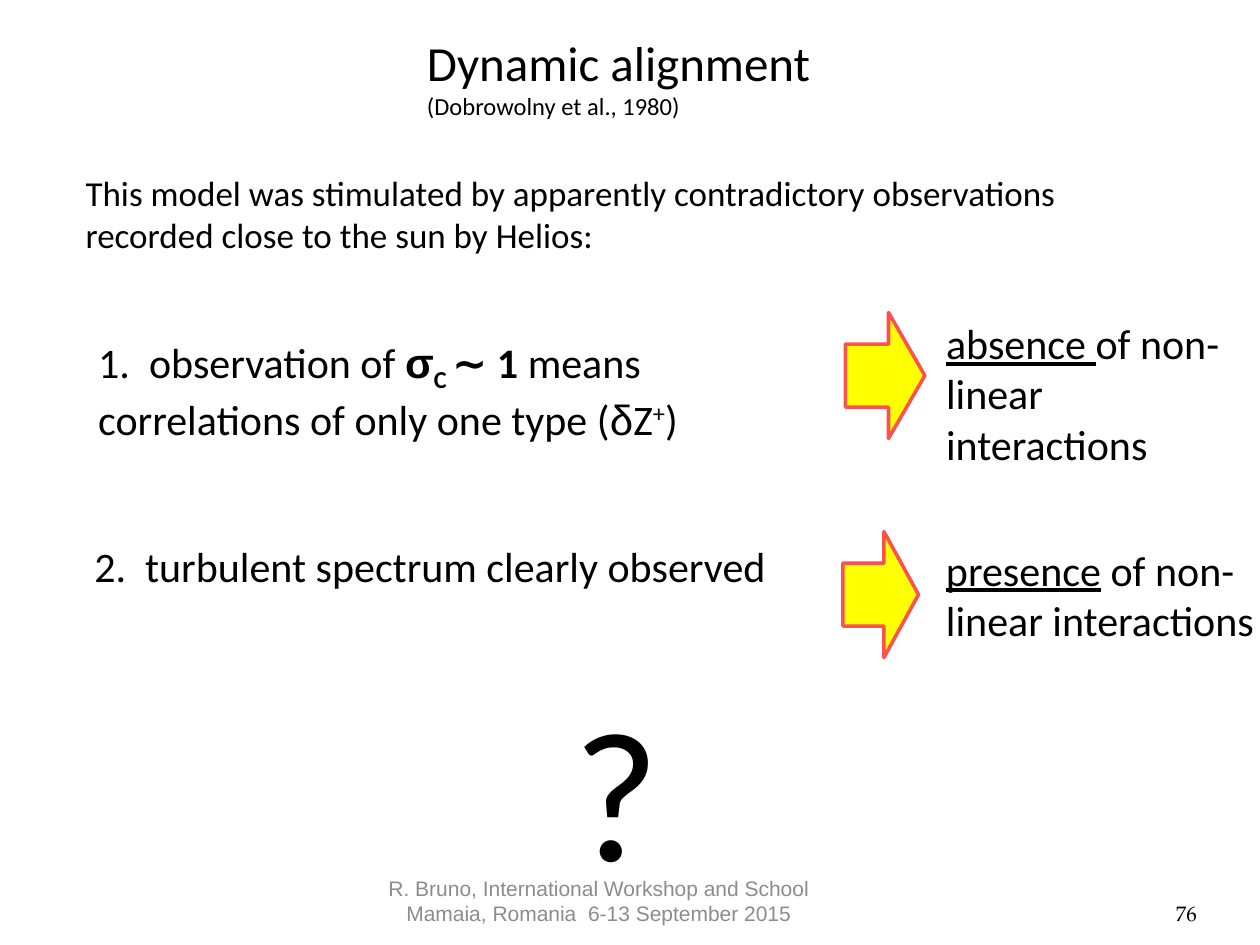
from pptx import Presentation
from pptx.dml.color import RGBColor
from pptx.enum.shapes import MSO_SHAPE
from pptx.enum.text import MSO_ANCHOR, MSO_AUTO_SIZE, PP_ALIGN
from pptx.util import Pt

BLACK = RGBColor(0x00, 0x00, 0x00)
GRAY = RGBColor(0x8C, 0x8C, 0x8C)
YELLOW = RGBColor(0xFF, 0xFF, 0x00)
RED = RGBColor(0xFF, 0x50, 0x50)
CONCLUSION_LEFT = 533.5


def add_run(paragraph, text, size=24, font="Calibri", color=BLACK,
            bold=False, underline=False, baseline=0):
    """Append a formatted run; baseline is a percentage shift."""
    run = paragraph.add_run()
    run.text = text
    run.font.size = Pt(size)
    run.font.name = font
    run.font.color.rgb = color
    run.font.bold = bold
    run.font.underline = underline
    if baseline:
        run.font._element.set("baseline", str(baseline * 1000))


def add_text(slide, box, *paragraphs, wrap=True, align=PP_ALIGN.LEFT):
    """Add a growing text box; each paragraph is a list of (text, format) runs."""
    shape = slide.shapes.add_textbox(*map(Pt, box))
    frame = shape.text_frame
    frame.word_wrap = wrap
    frame.auto_size = MSO_AUTO_SIZE.SHAPE_TO_FIT_TEXT
    for index, runs in enumerate(paragraphs):
        paragraph = frame.add_paragraph() if index else frame.paragraphs[0]
        paragraph.alignment = align
        for text, style in runs:
            add_run(paragraph, text, **style)
    return frame


def add_footer(slide, box, lines, align, **style):
    """Add bottom-anchored footer text without margins."""
    frame = add_text(slide, box, *[[(line, style)] for line in lines], align=align)
    frame.auto_size = MSO_AUTO_SIZE.NONE
    frame.vertical_anchor = MSO_ANCHOR.BOTTOM
    frame.margin_left = frame.margin_right = 0
    frame.margin_top = frame.margin_bottom = 0


def add_arrow(slide, box):
    """Add a yellow block arrow with a red outline."""
    arrow = slide.shapes.add_shape(MSO_SHAPE.RIGHT_ARROW, *map(Pt, box))
    arrow.shadow.inherit = False
    arrow.adjustments[0] = 0.5
    arrow.adjustments[1] = 0.457
    arrow.fill.solid()
    arrow.fill.fore_color.rgb = YELLOW
    arrow.line.color.rgb = RED
    arrow.line.width = Pt(2)


def main():
    """Build the dynamic alignment slide."""
    presentation = Presentation()
    presentation.slide_width = Pt(720)
    presentation.slide_height = Pt(540)
    slide = presentation.slides.add_slide(presentation.slide_layouts[6])

    add_text(slide, (236.9, 15.1, 242, 58.3),
             [("Dynamic alignment", {"size": 28})],
             [("(Dobrowolny et al., 1980)", {"size": 14})], wrap=False)
    add_text(slide, (41.8, 94.3, 594.7, 55.4),
             [("This model was stimulated by apparently contradictory observations "
               "recorded close to the sun by Helios:", {"size": 20})])

    add_text(slide, (49, 188.6, 431.3, 65.5), [
        ("1.  observation of ", {}),
        ("σ", {"font": "Arial", "bold": True}),
        ("C ", {"bold": True, "baseline": -25}),
        ("∼ 1 ", {"bold": True}),
        ("means correlations of only one type (", {}),
        ("δ", {"font": "Arial"}),
        ("Z", {}),
        ("+", {"baseline": 30}),
        (")", {}),
    ])
    add_text(slide, (46.8, 305.3, 432.7, 36.7),
             [("2.  turbulent spectrum clearly observed", {})], wrap=False)

    add_arrow(slide, (483.1, 178.6, 45.4, 72))
    add_arrow(slide, (481.7, 303.8, 43.2, 72))
    add_text(slide, (CONCLUSION_LEFT, 177.8, 183.6, 94.3),
             [("absence ", {"underline": True}), ("of non-linear interactions", {})])
    add_text(slide, (CONCLUSION_LEFT, 307.4, 192.2, 94.3),
             [("presence", {"underline": True}), (" of non-linear interactions", {})])

    add_text(slide, (320.4, 383, 74.2, 136.1), [("?", {"size": 106})], wrap=False)

    add_footer(slide, (210.2, 500.4, 264.2, 28.8),
               ["R. Bruno, International Workshop and School",
                "Mamaia, Romania  6-13 September 2015"],
               PP_ALIGN.CENTER, size=12, font="Arial", color=GRAY)
    add_footer(slide, (624.2, 500.4, 59.8, 28.8), ["76"],
               PP_ALIGN.RIGHT, size=12, font="TeX Gyre Pagella")

    presentation.save("out.pptx")


if __name__ == "__main__":
    main()
